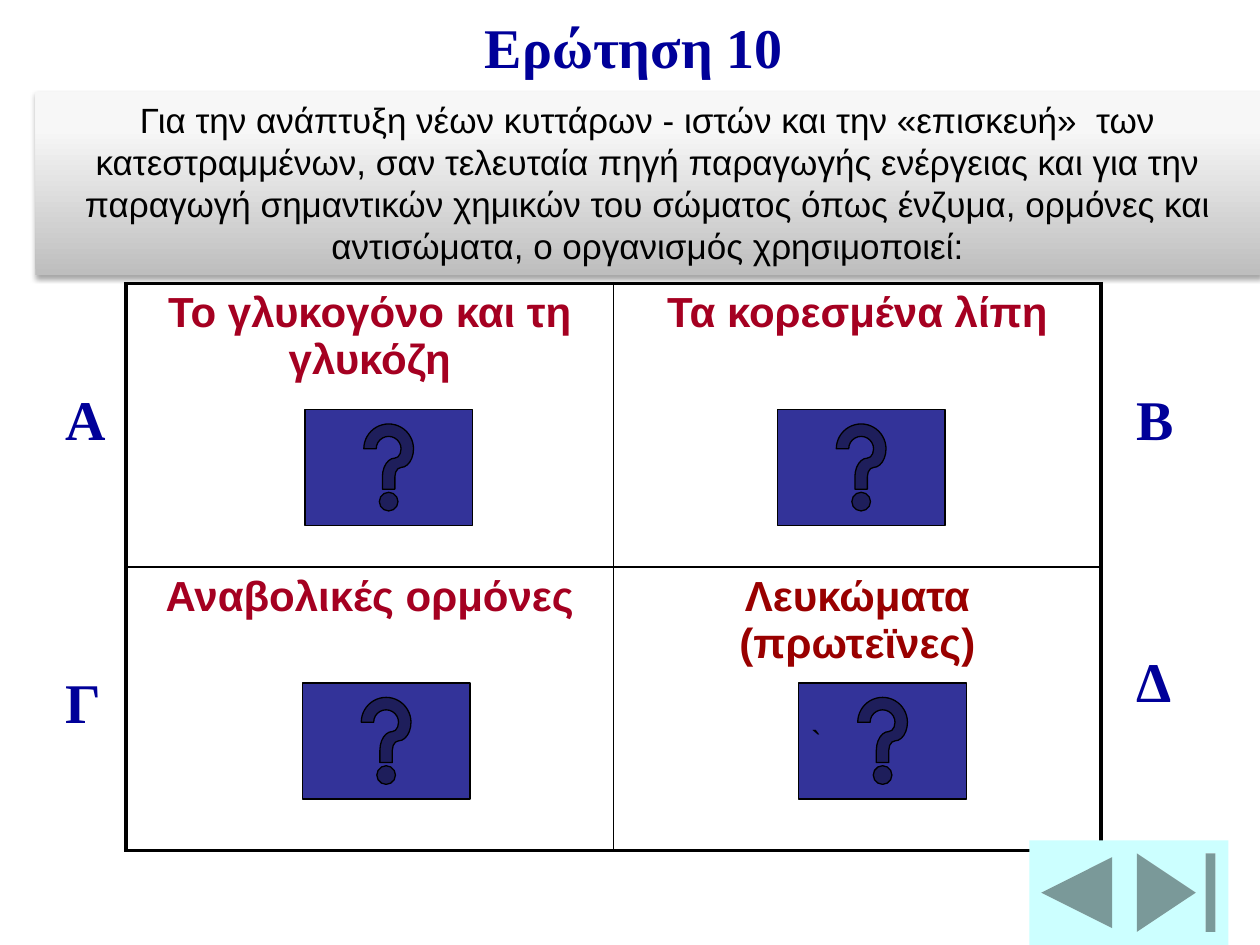
"""Build a four-answer quiz slide with help and navigation buttons."""
from copy import deepcopy
from typing import NamedTuple, Optional

from lxml.etree import SubElement
from pptx import Presentation
from pptx.dml.color import RGBColor
from pptx.enum.shapes import MSO_SHAPE
from pptx.enum.text import MSO_ANCHOR, PP_ALIGN
from pptx.oxml.ns import qn
from pptx.util import Pt

EMU_PER_PX = 9144
COLORS = {
    "navy": "000099", "crimson": "A50021", "maroon": "990000", "black": "000000",
    "white": "FFFFFF", "indigo": "333399", "aqua": "CCFFFF",
    "grey": "BEBEBE", "pale": "F7F7F7", "palest": "F8F8F8",
}
SERIF, SANS = "Times New Roman", "Arial"
THICK, THIN = 2.25, 1


class Box(NamedTuple):
    left: int
    top: int
    width: int
    height: int


class Style(NamedTuple):
    font: str
    size: int
    color: str
    bold: bool = False
    align: PP_ALIGN = PP_ALIGN.LEFT


class Heading(NamedTuple):
    text: str
    box: Box


class Answer(NamedTuple):
    text: str
    color: str


class Button(NamedTuple):
    kind: MSO_SHAPE
    box: Box
    fill: str
    outline: Optional[str] = None
    text: str = ""


HEADINGS = [
    Heading("Α", Box(42, 300, 50, 63)),
    Heading("Γ", Box(42, 525, 50, 63)),
    Heading("Β", Box(892, 300, 50, 63)),
    Heading("Δ", Box(892, 508, 50, 63)),
    Heading("Ερώτηση 10", Box(375, 5, 267, 63)),
]
ANSWERS = [
    [Answer("Το γλυκογόνο και τη γλυκόζη", "crimson"), Answer("Τα κορεσμένα λίπη", "crimson")],
    [Answer("Αναβολικές ορμόνες", "crimson"), Answer("Λευκώματα (πρωτεϊνες)", "maroon")],
]
HELP_SPOTS = [(634, 542, "`"), (240, 542, ""), (617, 325, ""), (242, 325, "")]
BUTTONS = [
    Button(MSO_SHAPE.ACTION_BUTTON_HELP, Box(left, top, 133, 92), "indigo", "black", text)
    for left, top, text in HELP_SPOTS
] + [
    Button(MSO_SHAPE.ACTION_BUTTON_END, Box(892, 667, 83, 83), "aqua"),
    Button(MSO_SHAPE.ACTION_BUTTON_BACK_OR_PREVIOUS, Box(817, 667, 75, 83), "aqua"),
]
QUESTION = (
    "Για την ανάπτυξη νέων κυττάρων - ιστών και την «επισκευή»  των κατεστραμμένων, "
    "σαν τελευταία πηγή παραγωγής ενέργειας και για την παραγωγή σημαντικών χημικών "
    "του σώματος όπως ένζυμα, ορμόνες και αντισώματα, ο οργανισμός χρησιμοποιεί:"
)
GRADIENT = [(0, "grey"), (0.8, "pale"), (1, "palest")]


def px(length: int) -> int:
    return length * EMU_PER_PX


def place(box: Box) -> list[int]:
    return [px(length) for length in box]


def rgb(name: str) -> RGBColor:
    return RGBColor.from_string(COLORS[name])


def write(frame, text: str, style: Style) -> None:
    paragraph = frame.paragraphs[0]
    paragraph.alignment = style.align
    run = paragraph.add_run()
    run.text = text
    run.font.name = style.font
    run.font.size = Pt(style.size)
    run.font.bold = style.bold
    run.font.color.rgb = rgb(style.color)


def add_heading(slide, heading: Heading) -> None:
    frame = slide.shapes.add_textbox(*place(heading.box)).text_frame
    frame.word_wrap = True
    write(frame, heading.text, Style(SERIF, 32, "navy", True))


def add_border(cell, side: str, weight: float) -> None:
    border = SubElement(cell._tc.get_or_add_tcPr(), qn(f"a:ln{side}"), w=str(int(Pt(weight))))
    fill = SubElement(border, qn("a:solidFill"))
    SubElement(fill, qn("a:srgbClr"), val=COLORS["black"])


def add_answers(slide, box: Box) -> None:
    table = slide.shapes.add_table(2, 2, *place(box)).table
    table.first_row = table.horz_banding = False
    for row, answers in enumerate(ANSWERS):
        for column, answer in enumerate(answers):
            cell = table.cell(row, column)
            outer = {"LR"[column], "TB"[row]}
            for side in "LRTB":
                add_border(cell, side, THICK if side in outer else THIN)
            cell.fill.solid()
            cell.fill.fore_color.rgb = rgb("white")
            write(cell.text_frame, answer.text,
                  Style(SANS, 24, answer.color, True, PP_ALIGN.CENTER))


def add_button(slide, button: Button) -> None:
    shape = slide.shapes.add_shape(button.kind, *place(button.box))
    shape.shadow.inherit = False
    shape.fill.solid()
    shape.fill.fore_color.rgb = rgb(button.fill)
    if button.outline:
        shape.line.color.rgb = rgb(button.outline)
        shape.line.width = Pt(0.75)
    else:
        shape.line.fill.background()
    if button.text:
        shape.text_frame.word_wrap = False
        shape.text_frame.vertical_anchor = MSO_ANCHOR.MIDDLE
        write(shape.text_frame, button.text, Style(SANS, 18, "black"))


def add_question(slide, box: Box) -> None:
    banner = slide.shapes.add_shape(MSO_SHAPE.RECTANGLE, *place(box))
    banner.line.fill.background()
    banner.fill.gradient()
    banner.fill.gradient_angle = 90
    properties = banner._element.spPr
    stops = properties.find(qn("a:gradFill")).find(qn("a:gsLst"))
    stops.append(deepcopy(stops[-1]))
    for stop, (position, color) in zip(banner.fill.gradient_stops, GRADIENT):
        stop.position = position
        stop.color.rgb = rgb(color)
    banner.shadow.inherit = False
    shadow = SubElement(properties.find(qn("a:effectLst")), qn("a:outerShdw"),
                        blurRad=str(int(Pt(3.1))), dist=str(int(Pt(1.8))),
                        dir="5400000", rotWithShape="0")
    shade = SubElement(shadow, qn("a:srgbClr"), val=COLORS["black"])
    SubElement(shade, qn("a:alpha"), val="35000")
    banner.text_frame.word_wrap = True
    banner.text_frame.vertical_anchor = MSO_ANCHOR.TOP
    write(banner.text_frame, QUESTION, Style(SANS, 20, "black", align=PP_ALIGN.CENTER))


def main() -> None:
    presentation = Presentation()
    presentation.slide_width, presentation.slide_height = px(1000), px(750)
    slide = presentation.slides.add_slide(presentation.slide_layouts[6])
    add_answers(slide, Box(100, 225, 774, 450))
    for heading in HEADINGS:
        add_heading(slide, heading)
    for button in BUTTONS:
        add_button(slide, button)
    add_question(slide, Box(28, 73, 972, 145))
    presentation.save("out.pptx")


if __name__ == "__main__":
    main()
